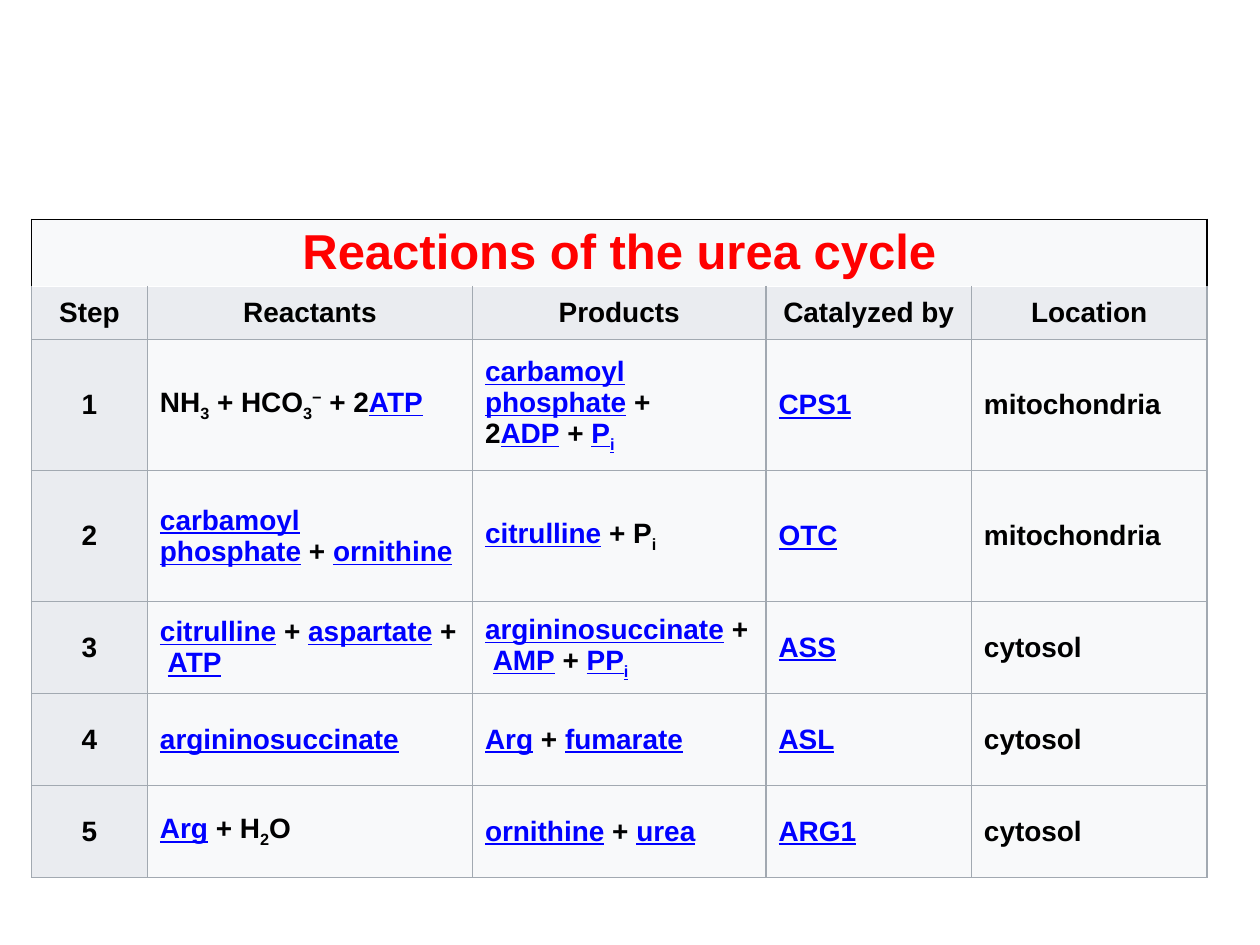
import pptx
import pptx.util
import pptx.dml.color
import pptx.enum.text
import pptx.oxml.ns
import lxml.etree

Pt = pptx.util.Pt
qn = pptx.oxml.ns.qn
text = pptx.enum.text


def color(code):
    return pptx.dml.color.RGBColor.from_string(code)


def edge(cell, sides, code, width):
    props = cell._tc.get_or_add_tcPr()
    for spot, side in enumerate(sides):
        line = lxml.etree.Element(qn("a:ln" + side), w=str(Pt(width)))
        fill = lxml.etree.SubElement(line, qn("a:solidFill"))
        lxml.etree.SubElement(fill, qn("a:srgbClr"), val=code)
        props.insert(spot, line)


wide = [66.24, 185.76, 167.76, 117.36, 134.64]
high = [30.24, 30.24, 74.88, 74.88, 52.56, 52.56, 52.56]
shift = {"_": "-25000", "^": "30000"}
rows = [
    ["Reactions of the urea cycle", "", "", "", ""],
    ["Step", "Reactants", "Products", "Catalyzed by", "Location"],
    ["1", "NH|_3|~+ HCO|_3|^−|~+ 2|*ATP",
     "*carbamoyl phosphate|~+ 2|*ADP|~+~|*P|*_i", "*CPS1", "mitochondria"],
    ["2", "*carbamoyl phosphate|~+~|*ornithine",
     "*citrulline|~+ P|_i", "*OTC", "mitochondria"],
    ["3", "*citrulline|~+~|*aspartate|~+~|*ATP",
     "*argininosuccinate|~+~|*AMP|~+~|*PP|*_i", "*ASS", "cytosol"],
    ["4", "*argininosuccinate", "*Arg|~+~|*fumarate", "*ASL", "cytosol"],
    ["5", "*Arg|~+ H|_2|O", "*ornithine|~+~|*urea", "*ARG1", "cytosol"],
]

deck = pptx.Presentation()
deck.slide_width, deck.slide_height = Pt(720), Pt(540)
slide = deck.slides.add_slide(deck.slide_layouts[6])
table = slide.shapes.add_table(
    len(rows), len(wide), Pt(18), Pt(125.28), Pt(sum(wide)), Pt(sum(high))).table
table.first_row = table.horz_banding = False
for col, size in zip(table.columns, wide):
    col.width = Pt(size)
for row, size in zip(table.rows, high):
    row.height = Pt(size)
table.cell(0, 0).merge(table.cell(0, len(wide) - 1))

for y, row in enumerate(rows):
    for x, entry in enumerate(row):
        cell = table.cell(y, x)
        head = y == 1 or (y > 1 and x == 0)
        cell.fill.solid()
        cell.fill.fore_color.rgb = color("EAECF0" if head else "F8F9FA")
        cell.vertical_anchor = text.MSO_ANCHOR.MIDDLE
        if y == 0:
            edge(cell, "LRTB", "000000", 1)
        else:
            edge(cell, "LRB" if y == 1 else "LRTB", "A2A9B1", 0.75)
        if not entry:
            continue
        para = cell.text_frame.paragraphs[0]
        if head or y == 0:
            para.alignment = text.PP_ALIGN.CENTER
        for part in entry.split("|"):
            link = part.startswith("*")
            part = part.lstrip("*")
            run = para.add_run()
            run.text = part.lstrip("_^").replace("~", chr(160))
            font = run.font
            font.name, font.bold = "Arial", True
            font.size = Pt(16 if y else 28)
            font.underline = link
            font.color.rgb = color("FF0000" if y == 0 else "0000FF" if link else "000000")
            if part[0] in shift:
                run._r.get_or_add_rPr().set("baseline", shift[part[0]])

deck.save("out.pptx")
